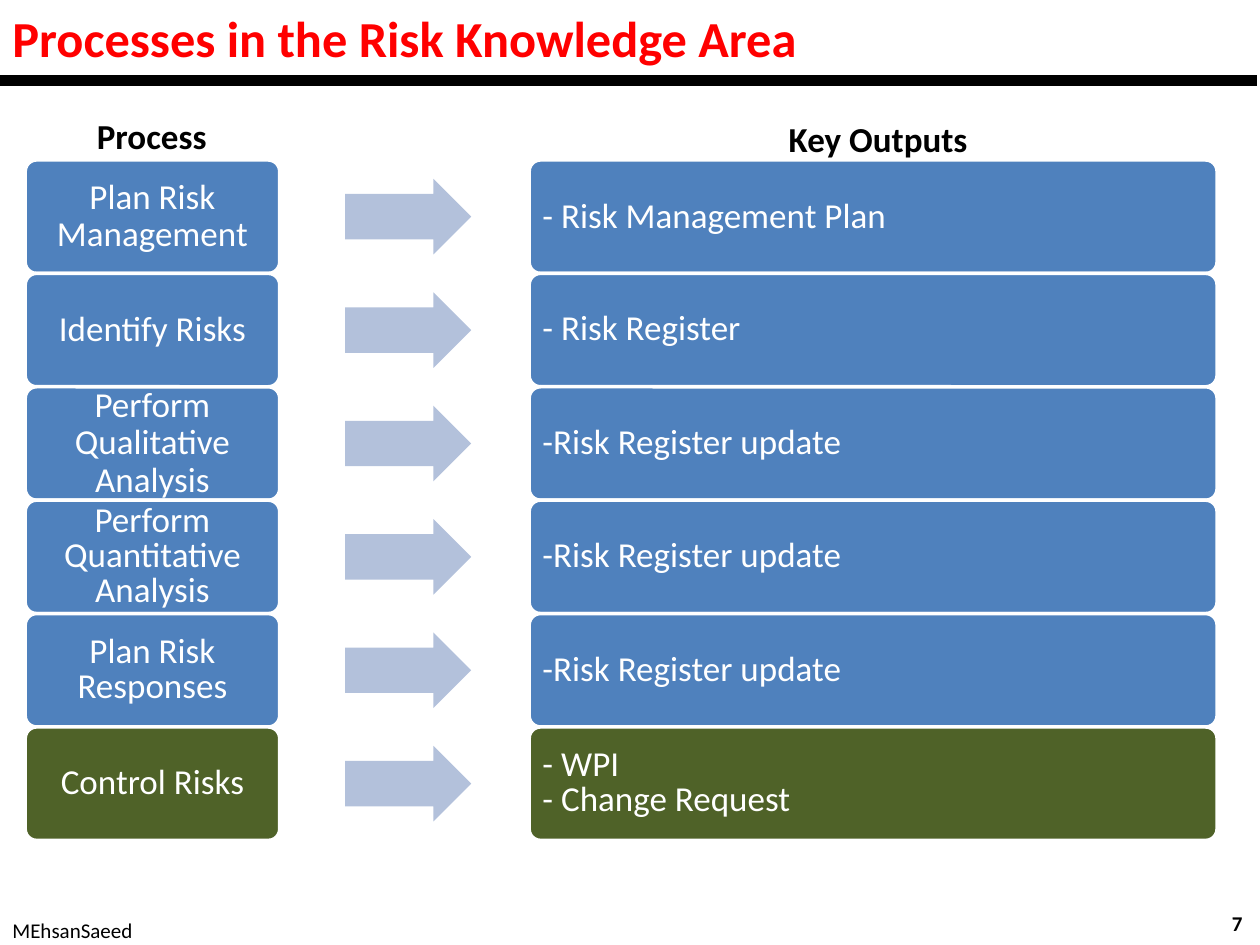
from lxml.etree import SubElement
from pptx import Presentation
from pptx.dml.color import RGBColor
from pptx.enum.shapes import MSO_CONNECTOR as CONN, MSO_SHAPE as SHAPE
from pptx.enum.text import MSO_ANCHOR as ANCHOR, PP_ALIGN as ALIGN
from pptx.oxml.ns import qn
from pptx.util import Pt

PX = 9144  # EMU per px, 100 px to the inch
BLACK = RGBColor(0x00, 0x00, 0x00)
WHITE = RGBColor(0xFF, 0xFF, 0xFF)
RED = RGBColor(0xFF, 0x00, 0x00)
BLUE = RGBColor(0x4F, 0x81, 0xBD)
GREEN = RGBColor(0x4F, 0x62, 0x28)
PALE = RGBColor(0xB3, 0xC1, 0xDB)

prs = Presentation()
prs.slide_width, prs.slide_height = 1000 * PX, 750 * PX
s = prs.slides.add_slide(prs.slide_layouts[6])


def write(sp, text, size, color, bold=False, align=ALIGN.LEFT,
          anchor=ANCHOR.MIDDLE, spacing=None, inset=None, wrap=True):
    """Fill a shape with formatted text, one paragraph per line."""
    tf = sp.text_frame
    tf.text = text
    tf.word_wrap, tf.vertical_anchor = wrap, anchor
    if inset is not None:
        for side in ("left", "top", "right", "bottom"):
            setattr(tf, f"margin_{side}", inset * PX)
    font = {"name": "Calibri", "size": Pt(size), "bold": bold}
    for p in tf.paragraphs:
        p.alignment, p.line_spacing = align, spacing
        for r in p.runs:
            for key, value in font.items():
                setattr(r.font, key, value)
            r.font.color.rgb = color


def add_block(kind, box, fill, adjustments):
    sp = s.shapes.add_shape(kind, *(v * PX for v in box))
    sp.shadow.inherit = False
    sp.fill.solid()
    sp.fill.fore_color.rgb = fill
    for i, value in enumerate(adjustments):
        sp.adjustments[i] = value
    return sp


# Title, footer and column headings
labels = [
    ((0, 0, 1000, 60), "Processes in the Risk Knowledge Area",
     dict(size=28.8, color=RED, bold=True)),
    ((763, 713, 233, 40), "7", dict(size=12, color=BLACK, bold=True, align=ALIGN.RIGHT)),
    ((0, 718, 117, 40), "MEhsanSaeed", dict(size=12, color=BLACK)),
    ((67, 86, 108, 44), "Process",
     dict(size=20, color=BLACK, bold=True, anchor=ANCHOR.TOP, wrap=False)),
    ((519, 88, 356, 44), "Key Outputs",
     dict(size=20, color=BLACK, bold=True, anchor=ANCHOR.TOP, align=ALIGN.CENTER)),
]
for box, text, fmt in labels:
    write(s.shapes.add_textbox(*(v * PX for v in box)), text, **fmt)

# Rule under the title
rule = s.shapes.add_connector(CONN.STRAIGHT, -2 * PX, 64 * PX, 998 * PX, 64 * PX)
rule.line.color.rgb, rule.line.width = BLACK, Pt(6)
SubElement(rule._element.spPr, qn("a:effectLst"))

# Process rows: name, outputs, colour, line spacing of each
TIGHT, EXACT = 0.9, Pt(20)
rows = [
    ("Plan Risk Management", "- Risk Management Plan", BLUE, TIGHT, TIGHT),
    ("Identify Risks", "- Risk Register", BLUE, TIGHT, EXACT),
    ("Perform Qualitative Analysis", "-Risk Register update", BLUE, TIGHT, TIGHT),
    ("Perform Quantitative Analysis", "-Risk Register update", BLUE, EXACT, EXACT),
    ("Plan Risk Responses", "-Risk Register update", BLUE, EXACT, TIGHT),
    ("Control Risks", "- WPI\n- Change Request", GREEN, EXACT, EXACT),
]
TOP, ROW_H = 127, 90
for i, (process, outputs, fill, process_ls, outputs_ls) in enumerate(rows):
    y = TOP + i * ROW_H
    cells = [(20, 202, process, ALIGN.CENTER, process_ls),
             (420, 546, outputs, ALIGN.LEFT, outputs_ls)]
    for x, w, text, align, spacing in cells:
        sp = add_block(SHAPE.ROUNDED_RECTANGLE, (x, y, w, ROW_H), fill, [0.1])
        sp.line.color.rgb, sp.line.width = WHITE, Pt(2)
        write(sp, text, 20, WHITE, align=align, spacing=spacing, inset=8)
    arrow = add_block(SHAPE.RIGHT_ARROW, (274, y + 15, 100, 60), PALE, [0.6, 0.5])
    arrow.line.fill.background()

prs.save("out.pptx")
